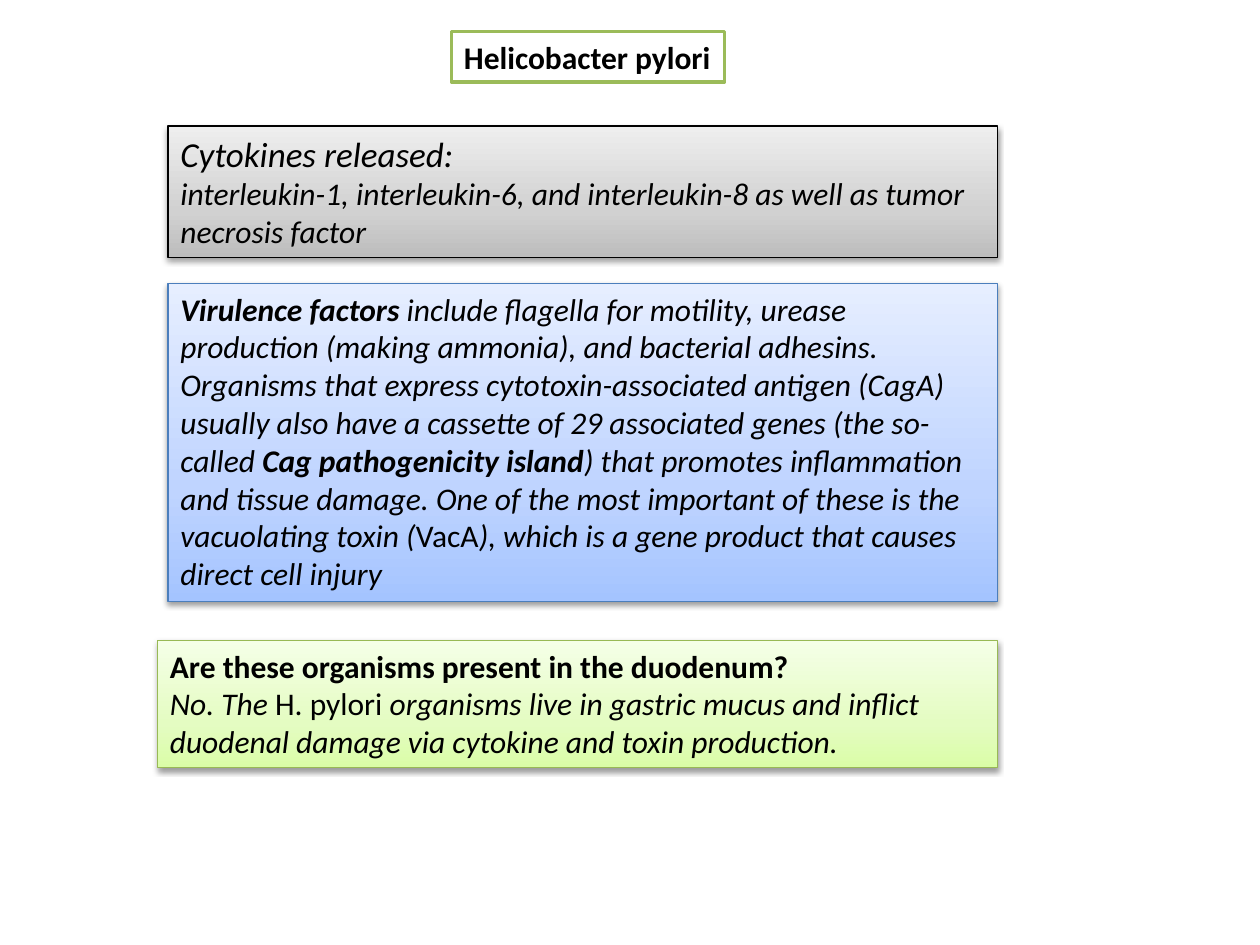
from lxml import etree
from pptx import Presentation
from pptx.dml.color import RGBColor
from pptx.enum import text
from pptx.oxml import ns
from pptx.util import Pt


def color(value):
    return RGBColor.from_string(value)


def add_child(parent, tag, **attributes):
    return etree.SubElement(parent, ns.qn(tag), attributes)


deck = Presentation()
deck.slide_width, deck.slide_height = Pt(720), Pt(540)
slide = deck.slides.add_slide(deck.slide_layouts[6])

heading = [[("Helicobacter pylori", 18, "b")]]
cytokines = [
    [("Cytokines released:", 20, "i")],
    [("interleukin-1, interleukin-6, and interleukin-8 as well as tumor necrosis factor", 18, "i")],
]
virulence = [[
    ("Virulence factors", 18, "bi"),
    (" include flagella for motility, urease production (making ammonia), and bacterial adhesins. "
     "Organisms that express cytotoxin-associated antigen (CagA) usually also have a cassette of 29 "
     "associated genes (the so-called ", 18, "i"),
    ("Cag pathogenicity island", 18, "bi"),
    (") that promotes inflammation and tissue damage. One of the most important of these is the "
     "vacuolating toxin (", 18, "i"),
    ("VacA", 18, ""),
    ("), which is a gene product that causes direct cell injury", 18, "i"),
]]
duodenum = [
    [("Are these organisms present in the duodenum?", 18, "b")],
    [("No. The", 18, "i"), (" H. pylori ", 18, ""),
     ("organisms live in gastric mucus and inflict duodenal damage via cytokine and toxin production.", 18, "i")],
]

panels = [
    (258, 18, 156, 29, "9BBB59", 2, None, heading),
    (96, 72, 474, 75, "000000", 0.75, ("BDBDBD", "D1D1D1", "EEEEEE"), cytokines),
    (96, 162, 474, 181.75, "4B7EBC", 0.75, ("A4C4FF", "BFD4FF", "E6EEFF"), virulence),
    (90, 366, 480, 72.75, "98B955", 0.75, ("DAFDA7", "E4FCC2", "F5FFE7"), duodenum),
]

for left, top, width, height, outline, weight, gradient, paragraphs in panels:
    panel = slide.shapes.add_textbox(Pt(left), Pt(top), Pt(width), Pt(height))
    panel.line.color.rgb = color(outline)
    panel.line.width = Pt(weight)
    panel.shadow.inherit = False

    if gradient:
        panel.fill.gradient()
        panel.fill.gradient_angle = 90
        stops = panel.element.spPr.find(".//" + ns.qn("a:gsLst"))
        for stop in list(stops):
            stops.remove(stop)
        for position, shade in zip((0, 35, 100), gradient):
            stop = add_child(stops, "a:gs", pos=str(position * 1000))
            add_child(stop, "a:srgbClr", val=shade)
        effects = panel.element.spPr.find(ns.qn("a:effectLst"))
        shadow = add_child(effects, "a:outerShdw", blurRad=str(Pt(3.15)), dist=str(Pt(1.6)),
                           dir="5400000", rotWithShape="0")
        add_child(add_child(shadow, "a:srgbClr", val="000000"), "a:alpha", val="38000")
    else:
        panel.fill.solid()
        panel.fill.fore_color.rgb = color("FFFFFF")

    frame = panel.text_frame
    frame.word_wrap = gradient is not None
    frame.auto_size = text.MSO_AUTO_SIZE.SHAPE_TO_FIT_TEXT
    for index, pieces in enumerate(paragraphs):
        paragraph = frame.add_paragraph() if index else frame.paragraphs[0]
        for words, size, style in pieces:
            run = paragraph.add_run()
            run.text = words
            run.font.name = "Calibri"
            run.font.size = Pt(size)
            run.font.bold = "b" in style
            run.font.italic = "i" in style
            run.font.color.rgb = color("000000")

deck.save("out.pptx")
